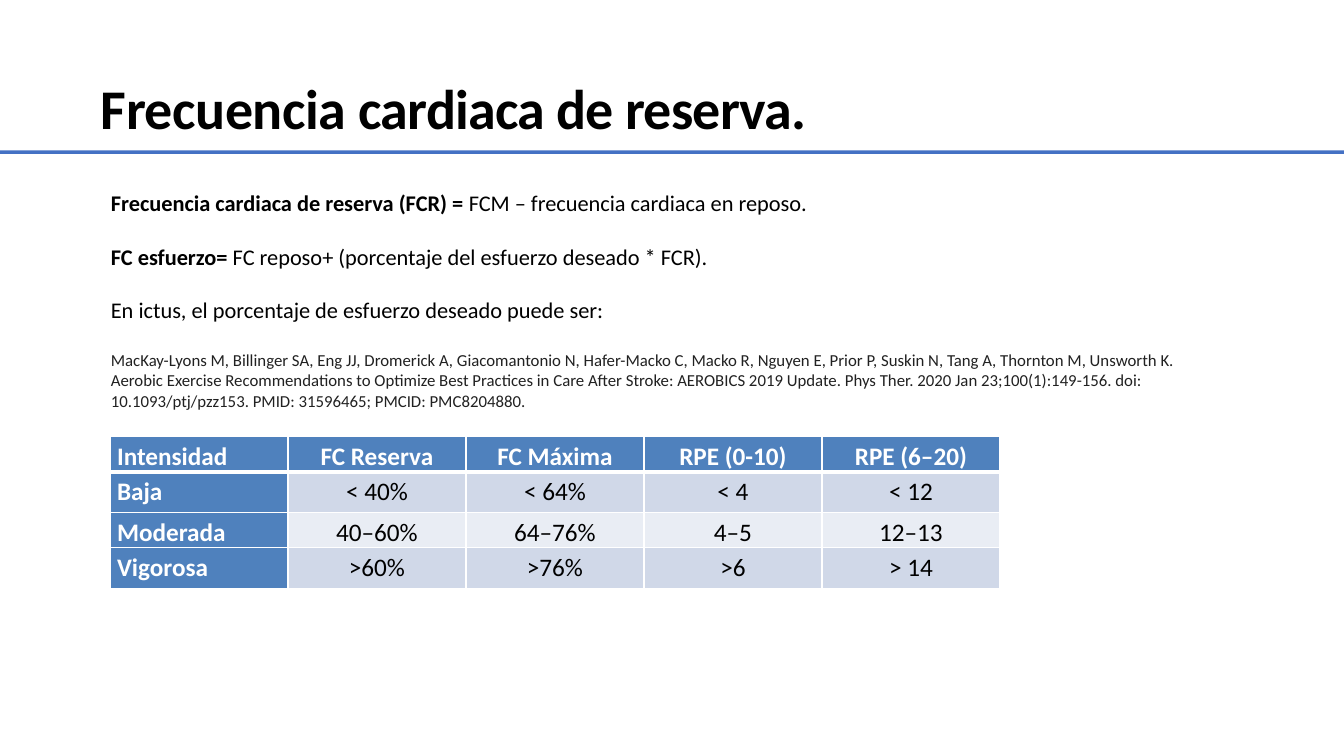
from lxml import etree
from pptx import Presentation
from pptx.dml.color import RGBColor
from pptx.enum.shapes import MSO_SHAPE
from pptx.enum.text import MSO_ANCHOR, MSO_AUTO_SIZE, PP_ALIGN
from pptx.oxml.ns import qn
from pptx.util import Cm, Pt

TOP = MSO_ANCHOR.TOP
NO_AUTOFIT = MSO_AUTO_SIZE.NONE
LEFT, CENTER = PP_ALIGN.LEFT, PP_ALIGN.CENTER
RECTANGLE = MSO_SHAPE.RECTANGLE

FONT = "Calibri"
COLORS = {
    "text": "000000",
    "citation": "212121",
    "rule": "4471C4",
    "header": "4F81BD",
    "odd_row": "D0D8E8",
    "even_row": "E9EDF4",
    "white": "FFFFFF",
}


def add_run(paragraph, text, size, color, bold=False):
    run = paragraph.add_run()
    run.text = text
    run.font.name = FONT
    run.font.size = Pt(size)
    run.font.bold = bold
    run.font.color.rgb = RGBColor.from_string(COLORS[color])
    return run


def add_border(cell, side, points):
    line = etree.SubElement(cell._tc.get_or_add_tcPr(), qn(f"a:{side}"), w=str(Pt(points)))
    fill = etree.SubElement(line, qn("a:solidFill"))
    etree.SubElement(fill, qn("a:srgbClr"), val=COLORS["white"])


presentation = Presentation()
presentation.slide_width, presentation.slide_height = Cm(33.87), Cm(19.05)
slide = presentation.slides.add_slide(presentation.slide_layouts[1])
title, formulas = slide.placeholders

# Title
title.left, title.top, title.width, title.height = Cm(2.54), Cm(1.8), Cm(22.23), Cm(1.75)
heading = title.text_frame
heading.auto_size = NO_AUTOFIT
heading.vertical_anchor = TOP
heading.margin_left = heading.margin_right = heading.margin_bottom = 0
heading.margin_top = Cm(0.06)
heading.paragraphs[0].alignment = LEFT
for text, tracking in (("Frecuencia ", -30), ("cardiaca de reserva.", -50)):
    run = add_run(heading.paragraphs[0], text, 40, "text", bold=True)
    run._r.get_or_add_rPr().set("spc", str(tracking))

# Rule under the title
rule = slide.shapes.add_shape(RECTANGLE, 0, Cm(3.79), presentation.slide_width, Cm(0.09))
rule.shadow.inherit = False
rule.fill.solid()
rule.fill.fore_color.rgb = RGBColor.from_string(COLORS["rule"])
rule.line.fill.background()

# Formulas and citation
formulas.left, formulas.top, formulas.width, formulas.height = Cm(2.54), Cm(4.65), Cm(27.94), Cm(5.9)
statements = [
    [("Frecuencia cardiaca de reserva (FCR) = ", 16, "text", True),
     ("FCM – frecuencia cardiaca en reposo.", 16, "text", False)],
    [("FC esfuerzo= ", 16, "text", True),
     ("FC reposo+ (porcentaje del esfuerzo deseado * FCR).", 16, "text", False)],
    [("En ictus, el porcentaje de esfuerzo deseado puede ser:", 16, "text", False)],
    [("MacKay-Lyons M, Billinger SA, Eng JJ, Dromerick A, Giacomantonio N, Hafer-Macko C, "
      "Macko R, Nguyen E, Prior P, Suskin N, Tang A, Thornton M, Unsworth K. Aerobic Exercise "
      "Recommendations to Optimize Best Practices in Care After Stroke: AEROBICS 2019 Update. "
      "Phys Ther. 2020 Jan 23;100(1):149-156. doi: 10.1093/ptj/pzz153. PMID: 31596465; "
      "PMCID: PMC8204880.", 12, "citation", False)],
]
body = formulas.text_frame
body.auto_size = NO_AUTOFIT
body.vertical_anchor = TOP
for index, statement in enumerate(statements):
    paragraph = body.add_paragraph() if index else body.paragraphs[0]
    properties = paragraph._p.get_or_add_pPr()
    properties.set("marL", "0")
    properties.set("indent", "0")
    etree.SubElement(properties, qn("a:buNone"))
    paragraph.space_before = Pt(19 if index else 0)
    for text, size, color, bold in statement:
        add_run(paragraph, text, size, color, bold)

# Intensity table
intensities = [
    ("Intensidad", "FC Reserva", "FC Máxima", "RPE (0-10)", "RPE (6–20)"),
    ("Baja", "< 40%", "< 64%", "< 4", "< 12"),
    ("Moderada", "40–60%", "64–76%", "4–5", "12–13"),
    ("Vigorosa", ">60%", ">76%", ">6", "> 14"),
]
row_heights = (0.86, 1.02, 0.86, 1.02)
table = slide.shapes.add_table(
    len(intensities), len(intensities[0]), Cm(2.77), Cm(11), Cm(22.43), Cm(sum(row_heights))
).table
for column in table.columns:
    column.width = Cm(4.486)
for row_index, (values, height) in enumerate(zip(intensities, row_heights)):
    table.rows[row_index].height = Cm(height)
    for column_index, value in enumerate(values):
        cell = table.cell(row_index, column_index)
        is_header = row_index == 0 or column_index == 0
        cell.margin_left = cell.margin_right = Cm(0.18)
        cell.margin_top = cell.margin_bottom = 0
        cell.vertical_anchor = TOP
        add_border(cell, "lnL", 1)
        add_border(cell, "lnR", 1)
        add_border(cell, "lnT", 3 if row_index == 1 else 1)
        add_border(cell, "lnB", 3 if row_index == 0 else 1)
        band = "header" if is_header else "odd_row" if row_index % 2 else "even_row"
        cell.fill.solid()
        cell.fill.fore_color.rgb = RGBColor.from_string(COLORS[band])
        paragraph = cell.text_frame.paragraphs[0]
        paragraph.alignment = CENTER if column_index else LEFT
        paragraph.line_spacing = 1.15
        paragraph.space_after = Pt(10)
        add_run(paragraph, value, 18, "white" if is_header else "text", is_header)

presentation.save("out.pptx")
